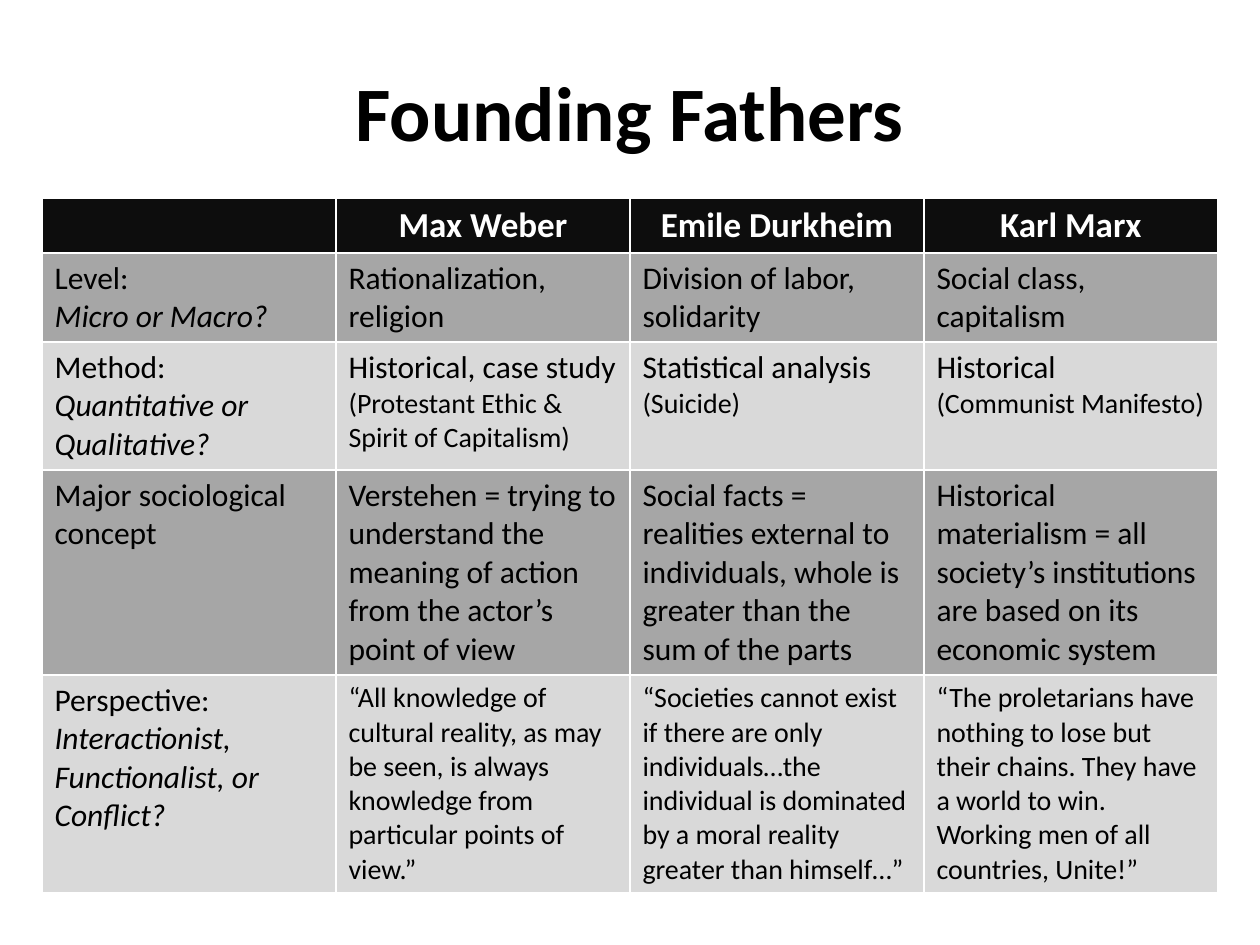
from dataclasses import dataclass

from pptx import Presentation
from pptx.dml.color import RGBColor
from pptx.enum.text import MSO_ANCHOR, PP_ALIGN
from pptx.util import Pt

SCALE = 914400 / 126  # EMU per px
COLORS = {"black": "000000", "white": "FFFFFF", "head": "0D0D0D",
          "dark": "A6A6A6", "light": "D9D9D9"}


@dataclass
class Run:
    text: str
    size: int = 18
    italic: bool = False


@dataclass
class Row:
    height: int
    fill: str
    cells: list[list[Run]]


def px(num: int) -> int:
    return round(num * SCALE)


def write(para, text: str, *, size: int = 18, color: str = "black",
          bold: bool = False, italic: bool = False, align=PP_ALIGN.LEFT) -> None:
    """Add a run to a paragraph; a newline at its end becomes a line break."""
    para.alignment = align
    run = para.add_run()
    run.text = text.rstrip("\n")
    font = run.font
    font.name, font.size, font.bold, font.italic = "Calibri", Pt(size), bold, italic
    font.color.rgb = RGBColor.from_string(COLORS[color])
    if text.endswith("\n"):
        para.add_line_break()


def paint(cell, color: str) -> None:
    cell.fill.solid()
    cell.fill.fore_color.rgb = RGBColor.from_string(COLORS[color])


def draw_title(slide, text: str) -> None:
    box = slide.shapes.add_textbox(px(63), px(32), px(1134), px(157))
    frame = box.text_frame
    frame.word_wrap = True
    frame.vertical_anchor = MSO_ANCHOR.MIDDLE
    write(frame.paragraphs[0], text, size=44, bold=True, align=PP_ALIGN.CENTER)


def draw_table(slide, heads: list[str], rows: list[Row]) -> None:
    top = 55
    tall = top + sum(row.height for row in rows)
    table = slide.shapes.add_table(len(rows) + 1, len(heads), px(42), px(198),
                                   px(294 * len(heads)), px(tall)).table
    # Header row
    table.rows[0].height = px(top)
    for cell, name in zip(table.rows[0].cells, heads):
        paint(cell, "head")
        if name:
            write(cell.text_frame.paragraphs[0], name, size=20, color="white",
                  bold=True, align=PP_ALIGN.CENTER)
    # Body rows
    for index, row in enumerate(rows, 1):
        line = table.rows[index]
        line.height = px(row.height)
        for cell, runs in zip(line.cells, row.cells):
            paint(cell, row.fill)
            for run in runs:
                write(cell.text_frame.paragraphs[0], run.text,
                      size=run.size, italic=run.italic)


HEADS = ["", "Max Weber", "Emile Durkheim", "Karl Marx"]
ROWS = [
    Row(89, "dark", [
        [Run("Level: \n"), Run("Micro or Macro?", italic=True)],
        [Run("Rationalization, religion")],
        [Run("Division of labor, solidarity")],
        [Run("Social class, capitalism")]]),
    Row(128, "light", [
        [Run("Method: "), Run("Quantitative or Qualitative?", italic=True)],
        [Run("Historical, case study "),
         Run("(Protestant Ethic & Spirit of Capitalism)", 16)],
        [Run("Statistical analysis "), Run("(Suicide)", 16)],
        [Run("Historical\n"), Run("(Communist Manifesto)", 16)]]),
    Row(205, "dark", [
        [Run("Major sociological concept")],
        [Run("Verstehen = trying to understand the meaning of action "
             "from the actor’s point of view")],
        [Run("Social facts = realities external to individuals, whole is "
             "greater than the sum of the parts")],
        [Run("Historical materialism = all society’s institutions are based "
             "on its economic system")]]),
    Row(218, "light", [
        [Run("Perspective: "),
         Run("Interactionist, Functionalist, or Conflict?", italic=True)],
        [Run("“All knowledge of cultural reality, as may be seen, is always "
             "knowledge from particular points of view.”", 16)],
        [Run("“Societies cannot exist if there are only individuals…the "
             "individual is dominated by a moral reality greater than "
             "himself…”", 16)],
        [Run("“The proletarians have nothing to lose but their chains. They "
             "have a world to win. Working men of all countries, Unite!”", 16)]]),
]


def main() -> None:
    deck = Presentation()
    deck.slide_width, deck.slide_height = px(1260), px(945)
    slide = deck.slides.add_slide(deck.slide_layouts[6])
    draw_title(slide, "Founding Fathers")
    draw_table(slide, HEADS, ROWS)
    deck.save("out.pptx")


if __name__ == "__main__":
    main()
